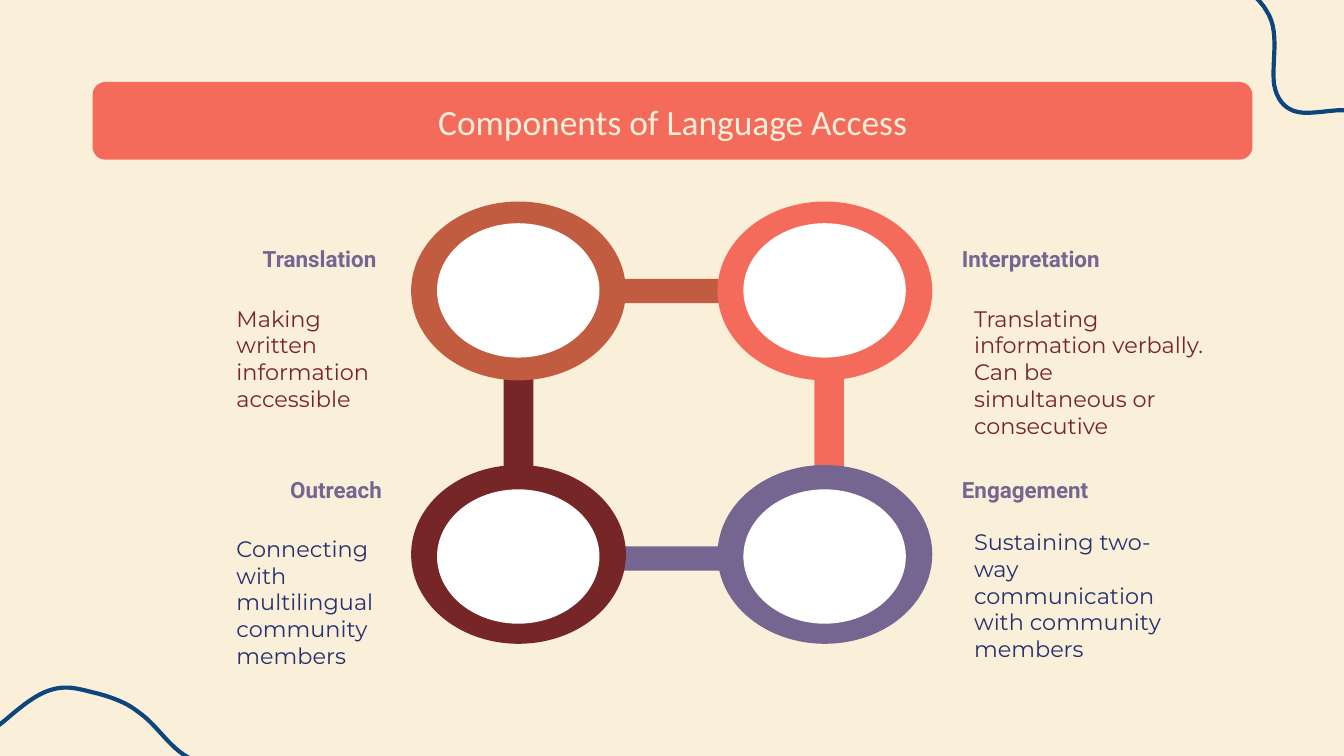
from pptx import Presentation, util as u
from pptx.dml.color import RGBColor
from pptx.enum import shapes, text

COLORS = {
    "cream": "FAEFD9", "coral": "F46B5C", "rust": "C15C41", "maroon": "762627",
    "purple": "756591", "navy": "27316F", "blue": "0C467C", "white": "FFFFFF",
}
TITLE = "Components of Language Access"

# Components: column, row, ring colour, heading, text, text colour, text box (left, top, width)
COMPONENTS = [
    (0, 0, "rust", "Translation ", "Making written information accessible",
     "maroon", (4.22, 5.51, 3.56)),
    (1, 0, "coral", "Interpretation",
     "Translating information verbally. Can be simultaneous or consecutive",
     "maroon", (18.16, 5.51, 4.9)),
    (0, 1, "maroon", "Outreach", "Connecting with multilingual community members",
     "navy", (4.22, 9.86, 3.56)),
    (1, 1, "purple", "Engagement", "Sustaining two-way communication with community members",
     "navy", (18.16, 9.73, 4.24)),
]
# Bars joining the rings: colour, (left, top, width, height)
BARS = [
    ("maroon", (9.52, 7.06, 0.56, 1.83)),
    ("rust", (11.44, 5.27, 2.31, 0.46)),
    ("coral", (15.39, 7.01, 0.56, 1.91)),
    ("purple", (11.65, 10.33, 2.31, 0.46)),
]
# Corner waves: start point, then Bezier segments (two controls and an end)
WAVES = [
    [(22.94, -0.33),
     (22.94, -0.33, 23.65, -0.38, 23.98, 0.28), (24.18, 0.66, 24.03, 1.19, 24.08, 1.6),
     (24.16, 2.01, 24.41, 2.16, 24.79, 2.13), (25.22, 2.11, 25.58, 1.96, 25.88, 2.34)],
    [(-0.56, 13.97),
     (-0.2, 13.89, 0.03, 13.67, 0.28, 13.46), (0.53, 13.26, 0.81, 13.03, 1.17, 13),
     (1.4, 12.98, 1.63, 13.06, 1.85, 13.11), (2.11, 13.18, 2.39, 13.28, 2.59, 13.44),
     (2.97, 13.69, 3.18, 14.12, 3.58, 14.33), (3.89, 14.45, 4.22, 14.5, 4.55, 14.53)],
]
RING_LEFTS, RING_TOPS, RING_SIZE = (7.77, 13.56), (3.81, 8.79), (4.06, 3.38)
HOLE_LEFTS, HOLE_TOPS, HOLE_SIZE = (8.26, 14.05), (4.22, 9.25), (3.07, 2.54)
HEADING_LEFTS, HEADING_TOPS, HEADING_SIZE = (2.34, 17.93), (4.39, 8.76), (5.13, 1.09)
CURVE_STEPS = 12


def rgb(color):
    return RGBColor.from_string(COLORS[color])


def add_filled(slide, kind, color, box):
    shape = slide.shapes.add_shape(kind, *map(u.Cm, box))
    shape.shadow.inherit = False
    shape.fill.solid()
    shape.fill.fore_color.rgb = rgb(color)
    shape.line.fill.background()
    return shape


def add_label(slide, content, box, color, font, align=text.PP_ALIGN.LEFT,
              anchor=text.MSO_ANCHOR.TOP, after=0):
    frame = slide.shapes.add_textbox(*map(u.Cm, box)).text_frame
    frame_format = {"word_wrap": True, "vertical_anchor": anchor}
    frame_format.update({f"margin_{side}": u.Cm(0.25)
                         for side in ("left", "right", "top", "bottom")})
    for name, value in frame_format.items():
        setattr(frame, name, value)
    paragraph = frame.paragraphs[0]
    paragraph.text = content
    paragraph.alignment = align
    paragraph.space_after = u.Pt(after)
    for name, value in font.items():
        setattr(paragraph.runs[0].font, name, value)
    paragraph.runs[0].font.color.rgb = rgb(color)


def curve_points(start, segments):
    points = [start]
    for x1, y1, x2, y2, x3, y3 in segments:
        x0, y0 = points[-1]
        for step in range(1, CURVE_STEPS + 1):
            t = step / CURVE_STEPS
            s = 1 - t
            weights = (s ** 3, 3 * s * s * t, 3 * s * t * t, t ** 3)
            points.append(tuple(sum(w * v for w, v in zip(weights, values))
                                for values in ((x0, x1, x2, x3), (y0, y1, y2, y3))))
    return [(u.Cm(x), u.Cm(y)) for x, y in points]


def add_wave(slide, wave):
    points = curve_points(wave[0], wave[1:])
    builder = slide.shapes.build_freeform(*points[0])
    builder.add_line_segments(points[1:], close=False)
    shape = builder.convert_to_shape()
    shape.shadow.inherit = False
    shape.fill.background()
    shape.line.color.rgb = rgb("blue")
    shape.line.width = u.Pt(2.25)


def main():
    presentation = Presentation()
    presentation.slide_width, presentation.slide_height = u.Cm(25.4), u.Cm(14.29)
    slide = presentation.slides.add_slide(presentation.slide_layouts[6])
    slide.background.fill.solid()
    slide.background.fill.fore_color.rgb = rgb("cream")

    # Title banner and corner waves
    add_filled(slide, shapes.MSO_SHAPE.ROUNDED_RECTANGLE, "coral", (1.75, 1.55, 21.92, 1.47))
    for wave in WAVES:
        add_wave(slide, wave)
    add_label(slide, TITLE, (2.01, 1.5, 21.41, 1.6), "cream",
              {"name": "Calibri", "size": u.Pt(19)},
              text.PP_ALIGN.CENTER, text.MSO_ANCHOR.MIDDLE)

    # Bars go behind the rings
    for color, box in BARS:
        add_filled(slide, shapes.MSO_SHAPE.RECTANGLE, color, box)

    # Rings with their headings and texts
    for column, row, color, heading, body, body_color, body_box in COMPONENTS:
        oval = shapes.MSO_SHAPE.OVAL
        add_filled(slide, oval, color, (RING_LEFTS[column], RING_TOPS[row], *RING_SIZE))
        add_filled(slide, oval, "white", (HOLE_LEFTS[column], HOLE_TOPS[row], *HOLE_SIZE))
        add_label(slide, heading, (HEADING_LEFTS[column], HEADING_TOPS[row], *HEADING_SIZE),
                  "purple", {"name": "Roboto", "size": u.Pt(12), "bold": True},
                  (text.PP_ALIGN.RIGHT, text.PP_ALIGN.LEFT)[column], after=12)
        add_label(slide, body, (*body_box, 1.93), body_color,
                  {"name": "Montserrat", "size": u.Pt(12)}, after=16)

    presentation.save("out.pptx")


if __name__ == "__main__":
    main()
